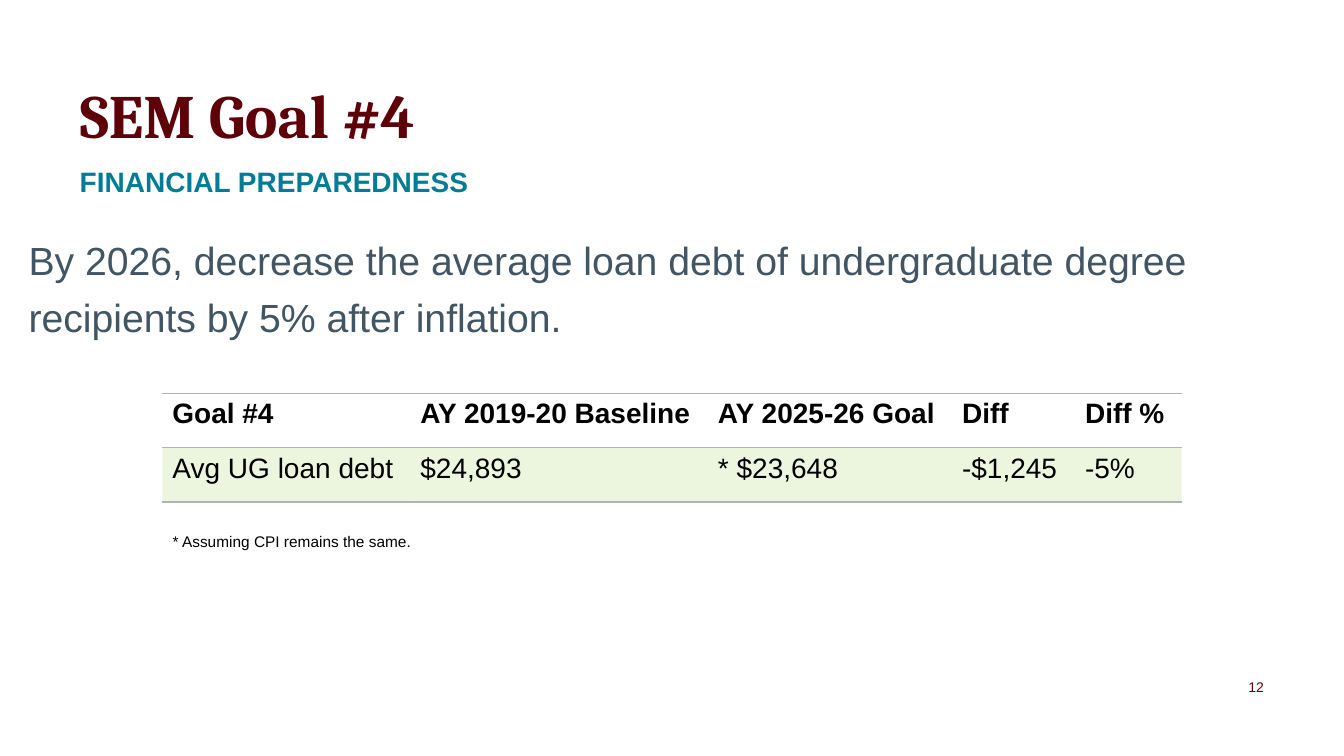
from dataclasses import dataclass

import pptx
import pptx.dml.color
import pptx.enum.text
import pptx.oxml
import pptx.oxml.ns
import pptx.util
from pptx.util import Cm

MAROON = "5E0009"
TEAL = "017C96"
SLATE = "425563"
BLACK = "000000"
GREEN = "A4D65E"
RULE_GREY = "B2B2B2"

Anchor = pptx.enum.text.MSO_ANCHOR
Align = pptx.enum.text.PP_ALIGN


@dataclass
class TextItem:
    text: str
    left: float
    top: float
    width: float
    height: float
    size: float
    color: str
    bold: bool = False
    font: str = "Arial"
    anchor: Anchor = Anchor.TOP
    align: Align = Align.LEFT
    line_spacing: float = 1.0
    margins: tuple[float, float] = (0, 0)  # horizontal, vertical


TITLE = TextItem("SEM Goal #4", 2.01, 1.9, 29.85, 1.9, 44, MAROON, bold=True,
                 font="Cambria", anchor=Anchor.BOTTOM)
TEXT_ITEMS = [
    TextItem("FINANCIAL PREPAREDNESS", 2.01, 4.14, 29.85, 0.94, 20, TEAL, bold=True),
    TextItem("By 2026, decrease the average loan debt of undergraduate degree "
             "recipients by 5% after inflation.",
             0.72, 5.72, 32.44, 11.13, 28, SLATE, line_spacing=1.2),
    TextItem("* Assuming CPI remains the same.", 4.1, 13.28, 8.28, 0.74, 11, BLACK,
             margins=(0.25, 0.13)),
    TextItem("12", 29.95, 16.84, 1.9, 0.94, 10, MAROON,
             anchor=Anchor.MIDDLE, align=Align.RIGHT),
]

TABLE_ROWS = [
    ["Goal #4", "AY 2019-20 Baseline", "AY 2025-26 Goal", "Diff", "Diff %"],
    ["Avg UG loan debt", "$24,893", "* $23,648", "-$1,245", "-5%"],
]
COLUMN_WIDTHS = [6.25, 7.5, 6.15, 3.1, 2.69]
ROW_HEIGHT = 1.37


def rgb(color: str) -> pptx.dml.color.RGBColor:
    return pptx.dml.color.RGBColor.from_string(color)


def format_runs(paragraph, size: float, color: str, bold: bool, font: str = "Arial") -> None:
    for run in paragraph.runs:
        run.font.size = pptx.util.Pt(size)
        run.font.color.rgb = rgb(color)
        run.font.bold = bold
        run.font.name = font


def fill_text(shape, item: TextItem) -> None:
    shape.left, shape.top = Cm(item.left), Cm(item.top)
    shape.width, shape.height = Cm(item.width), Cm(item.height)
    frame = shape.text_frame
    frame.text = item.text
    frame.word_wrap = True
    frame.auto_size = pptx.enum.text.MSO_AUTO_SIZE.NONE
    frame.vertical_anchor = item.anchor
    horizontal, vertical = item.margins
    frame.margin_left = frame.margin_right = Cm(horizontal)
    frame.margin_top = frame.margin_bottom = Cm(vertical)
    paragraph = frame.paragraphs[0]
    paragraph.alignment = item.align
    paragraph.line_spacing = item.line_spacing
    format_runs(paragraph, item.size, item.color, item.bold, item.font)


def set_borders(cell, ruled_sides: str) -> None:
    """Rule the named sides (of L, R, T, B) and clear the others."""
    properties = cell._tc.get_or_add_tcPr()
    for index, side in enumerate("LRTB"):
        if side in ruled_sides:
            paint = f'<a:solidFill><a:srgbClr val="{RULE_GREY}"/></a:solidFill>'
        else:
            paint = "<a:noFill/>"
        line = pptx.oxml.parse_xml(
            f'<a:ln{side} {pptx.oxml.ns.nsdecls("a")} w="12700">{paint}</a:ln{side}>')
        properties.insert(index, line)


def tint_cell(cell, color: str, opacity: int) -> None:
    cell.fill.solid()
    cell.fill.fore_color.rgb = rgb(color)
    color_element = cell._tc.tcPr.find(".//" + pptx.oxml.ns.qn("a:srgbClr"))
    color_element.append(pptx.oxml.parse_xml(
        f'<a:alpha {pptx.oxml.ns.nsdecls("a")} val="{opacity * 1000}"/>'))


def add_goal_table(slide) -> None:
    frame = slide.shapes.add_table(
        len(TABLE_ROWS), len(COLUMN_WIDTHS), Cm(4.09), Cm(9.91),
        Cm(sum(COLUMN_WIDTHS)), Cm(ROW_HEIGHT * len(TABLE_ROWS)))
    table = frame.table
    table.horz_banding = False
    for column, width in zip(table.columns, COLUMN_WIDTHS):
        column.width = Cm(width)
    for row_index, texts in enumerate(TABLE_ROWS):
        is_header = row_index == 0
        table.rows[row_index].height = Cm(ROW_HEIGHT)
        for column_index, text in enumerate(texts):
            cell = table.cell(row_index, column_index)
            cell.text_frame.text = text
            format_runs(cell.text_frame.paragraphs[0], 20, BLACK, is_header)
            if is_header:
                cell.fill.background()
            else:
                tint_cell(cell, GREEN, 20)
            set_borders(cell, "TB")


def main() -> None:
    presentation = pptx.Presentation()
    presentation.slide_width, presentation.slide_height = Cm(33.87), Cm(19.05)
    slide = presentation.slides.add_slide(presentation.slide_layouts[5])

    # Title and texts
    fill_text(slide.shapes.title, TITLE)
    for item in TEXT_ITEMS:
        box = slide.shapes.add_textbox(0, 0, Cm(item.width), Cm(item.height))
        fill_text(box, item)

    # Goal figures
    add_goal_table(slide)

    presentation.save("out.pptx")


if __name__ == "__main__":
    main()
